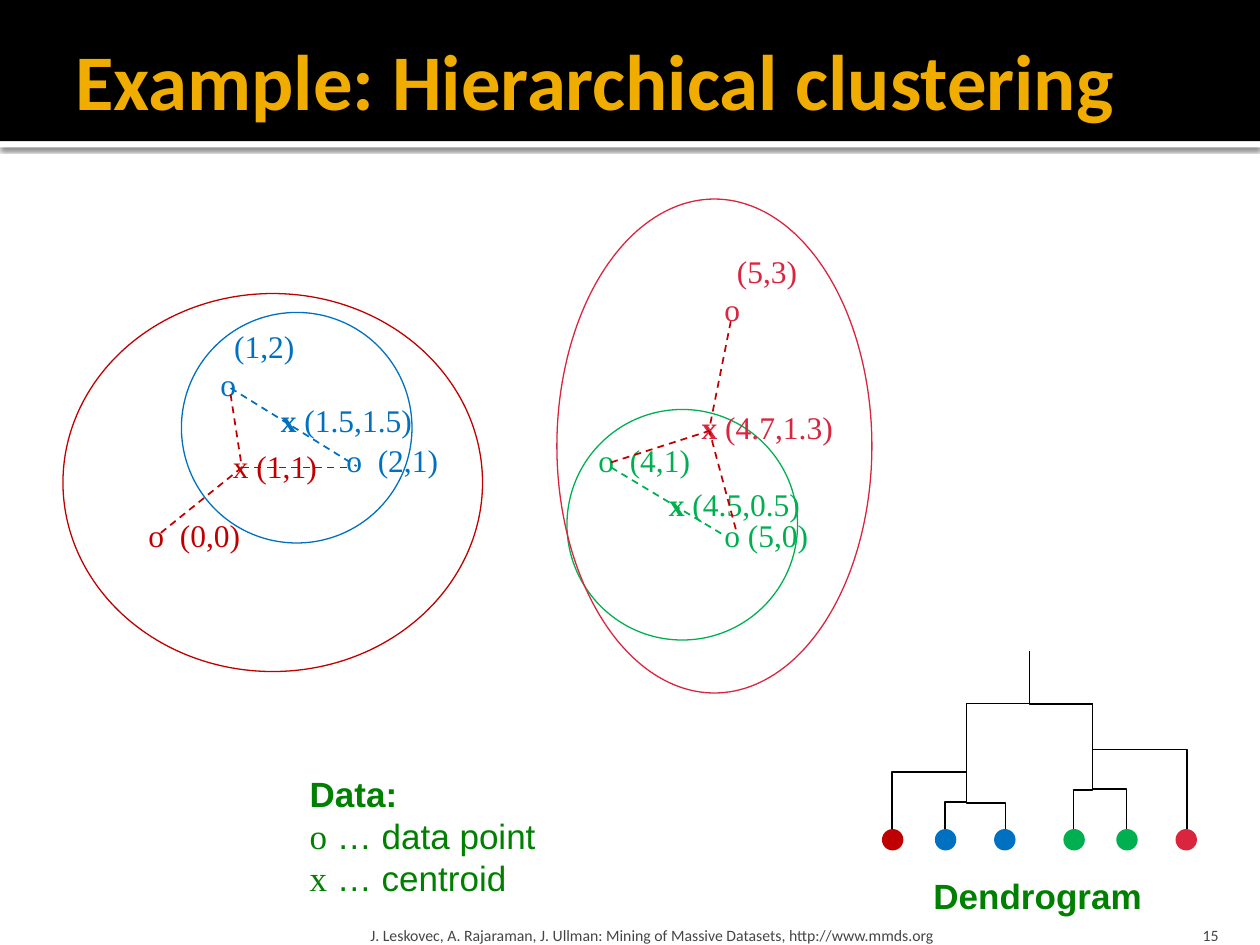
from lxml import etree
from pptx import Presentation
from pptx.dml.color import RGBColor
from pptx.enum.dml import MSO_LINE
from pptx.enum.shapes import MSO_CONNECTOR as LINK, MSO_SHAPE as SHAPE, MSO_SHAPE_TYPE as KIND
from pptx.enum.text import MSO_ANCHOR as ANCHOR, MSO_AUTO_SIZE as FIT, PP_ALIGN as ALIGN
from pptx.oxml.ns import qn
from pptx.util import Inches, Pt

BLACK = RGBColor(0x00, 0x00, 0x00)
WHITE = RGBColor(0xFF, 0xFF, 0xFF)
GRAY = RGBColor(0x45, 0x45, 0x45)
AMBER = RGBColor(0xF0, 0xAD, 0x00)
BLUE = RGBColor(0x00, 0x70, 0xC0)
GREEN = RGBColor(0x00, 0xB0, 0x50)
RED = RGBColor(0xC0, 0x00, 0x00)
CRIMSON = RGBColor(0xD9, 0x25, 0x3E)
DARK_GREEN = RGBColor(0x00, 0x80, 0x00)
SERIF, SANS, BODY = "Times New Roman", "Arial", "Calibri"

prs = Presentation()
prs.slide_width, prs.slide_height = Inches(10), Inches(7.5)
slide = prs.slides.add_slide(prs.slide_layouts[5])
shapes = slide.shapes


def add_run(paragraph, text, font=SERIF, size=18, color=BLACK, bold=False):
    run = paragraph.add_run()
    run.text = text
    run.font.name, run.font.size, run.font.bold = font, Pt(size), bold
    run.font.color.rgb = color


def add_frame(left, top, width, height):
    frame = shapes.add_textbox(*map(Inches, (left, top, width, height))).text_frame
    frame.word_wrap = True
    return frame


# Title on its black band, with a shadowed white strip below
title = shapes.title
for top, height, color in [(1.12, 0.05, WHITE), (0, 1.12, BLACK)]:
    band = shapes.add_shape(SHAPE.RECTANGLE, 0, Inches(top), prs.slide_width, Inches(height))
    band.shadow.inherit = False
    band.fill.solid()
    band.fill.fore_color.rgb = color
    band.line.fill.background()
    title.element.addprevious(band.element)
    if color == WHITE:
        effects = band.element.spPr.find(qn("a:effectLst"))
        shadow = etree.SubElement(effects, qn("a:outerShdw"), blurRad=str(Pt(2.5)),
                                  dist=str(Pt(0.8)), dir="5400000", rotWithShape="0")
        tint = etree.SubElement(shadow, qn("a:srgbClr"), val=str(BLACK))
        etree.SubElement(tint, qn("a:alpha"), val="60000")

title.left, title.top, title.width, title.height = map(Inches, (0.5, 0.17, 9, 0.92))
heading = title.text_frame
heading.auto_size = FIT.NONE
heading.vertical_anchor = ANCHOR.MIDDLE
heading.margin_right = Inches(0.05)
heading.paragraphs[0].alignment = ALIGN.LEFT
add_run(heading.paragraphs[0], "Example: Hierarchical clustering", BODY, 45, AMBER, True)

# Data points and their coordinates
for left, top, width, text, color in [
    (5.75, 1.95, 0.75, "(5,3)", CRIMSON),
    (5.65, 2.25, 0.4, "o", CRIMSON),
    (1.76, 2.55, 0.75, "(1,2)", BLUE),
    (1.65, 2.85, 0.4, "o", BLUE),
    (2.65, 3.45, 1.05, "o  (2,1)", BLUE),
    (4.65, 3.45, 1.05, "o  (4,1)", GREEN),
    (1.08, 4.05, 1.05, "o  (0,0)", RED),
    (5.65, 4.05, 1.05, "o (5,0)", GREEN),
]:
    add_run(add_frame(left, top, width, 0.4).paragraphs[0], text, color=color)

# Clusters, each with its centroid
for cluster, centroid, coordinates, color, bold in [
    ((1.44, 2.48, 1.83, 1.83), (2.13, 3.13), " (1.5,1.5)", BLUE, True),
    ((4.5, 3.25, 1.83, 1.83), (5.21, 3.8), " (4.5,0.5)", GREEN, True),
    ((0.5, 2.33, 3.33, 3), (1.75, 3.5), " (1,1)", RED, False),
    ((4.42, 1.58, 2.5, 3.92), (5.47, 3.19), " (4.7,1.3)", CRIMSON, True),
]:
    outline = shapes.add_shape(SHAPE.OVAL, *map(Inches, cluster))
    outline.shadow.inherit = False
    outline.fill.background()
    outline.line.color.rgb = color
    outline.line.width = Pt(0.75)
    paragraph = add_frame(*centroid, 1.35, 0.4).paragraphs[0]
    add_run(paragraph, "x", color=color, bold=bold)
    add_run(paragraph, coordinates, color=color)

# Dendrogram leaves
for left, color in [(7, RED), (7.42, BLUE), (7.89, BLUE),
                    (8.44, GREEN), (8.86, GREEN), (9.33, CRIMSON)]:
    leaf = shapes.add_shape(SHAPE.OVAL, *map(Inches, (left, 6.58, 0.17, 0.17)))
    leaf.shadow.inherit = False
    leaf.fill.solid()
    leaf.fill.fore_color.rgb = color
    leaf.line.fill.background()

# Dendrogram branches: from the lower end up to the merge, bending at a share of the rise
for x1, y1, x2, y2, bend in [
    (7.08, 6.58, 7.67, 5.67, 0.5),
    (7.5, 6.58, 7.67, 6.08, 0.43),
    (7.98, 6.58, 7.67, 6.17, 0.5),
    (8.52, 6.58, 8.67, 6.17, 0.76),
    (8.94, 6.58, 8.67, 5.92, 0.48),
    (9.42, 6.58, 8.67, 5.58, 0.63),
    (7.67, 6, 8.17, 5.17, 0.5),
    (8.67, 5.83, 8.17, 5.17, 0.37),
]:
    # A vertical start is an elbow laid flat about its centre, then turned
    center_x, center_y = (x1 + x2) / 2, (y1 + y2) / 2
    half_rise, half_run = (y1 - y2) / 2, abs(x2 - x1) / 2
    rightward = x2 > x1
    side = half_rise if rightward else -half_rise
    branch = shapes.add_connector(LINK.ELBOW, *map(Inches, (
        center_x + side, center_y + half_run, center_x - side, center_y - half_run)))
    branch.line.color.rgb = BLACK
    branch.line.width = Pt(1)
    properties = branch.element.spPr
    properties.find(qn("a:xfrm")).set("rot", "5400000" if rightward else "16200000")
    adjustments = properties.find(qn("a:prstGeom")).find(qn("a:avLst"))
    etree.SubElement(adjustments, qn("a:gd"), name="adj1", fmla=f"val {round(bend * 100000)}")

# Legend and dendrogram caption
legend = add_frame(2.36, 6.08, 2.1, 1.11)
add_run(legend.paragraphs[0], "Data:", SANS, 20, DARK_GREEN, True)
for symbol, meaning in [("o", " … data point"), ("x", " … centroid")]:
    entry = legend.add_paragraph()
    add_run(entry, symbol, SERIF, 20, DARK_GREEN)
    add_run(entry, meaning, SANS, 20, DARK_GREEN)
caption = add_frame(7.31, 6.89, 1.95, 0.44)
add_run(caption.paragraphs[0], "Dendrogram", SANS, 20, DARK_GREEN, True)

# Footer and slide number
for left, width, margin, align, text in [
    (2.89, 6.02, 0.05, ALIGN.LEFT,
     "J. Leskovec, A. Rajaraman, J. Ullman: Mining of Massive Datasets, http://www.mmds.org"),
    (8.97, 0.8, 0.1, ALIGN.RIGHT, "15"),
]:
    footer = add_frame(left, 7.2, width, 0.3)
    footer.vertical_anchor = ANCHOR.BOTTOM
    footer.margin_left = footer.margin_right = Inches(margin)
    footer.margin_bottom = 0
    footer.paragraphs[0].alignment = align
    add_run(footer.paragraphs[0], text, BODY, 9, GRAY)

# Dashed links from points to centroids
for x1, y1, x2, y2, color in [
    (1.83, 3.08, 2.83, 3.7, BLUE),
    (4.85, 3.71, 5.75, 4.25, GREEN),
    (1.83, 3.13, 1.92, 3.71, RED),
    (2.75, 3.71, 1.92, 3.71, RED),
    (1.92, 3.71, 1.25, 4.25, RED),
    (5.8, 2.55, 5.63, 3.4, RED),
    (4.85, 3.67, 5.63, 3.42, RED),
    (5.84, 4.2, 5.63, 3.42, RED),
]:
    link = shapes.add_connector(LINK.STRAIGHT, *map(Inches, (x1, y1, x2, y2)))
    link.line.color.rgb = color
    link.line.width = Pt(1)
    link.line.dash_style = MSO_LINE.DASH

# Connectors carry no shadow
for shape in shapes:
    if shape.shape_type == KIND.LINE:
        etree.SubElement(shape.element.spPr, qn("a:effectLst"))

prs.save("out.pptx")
